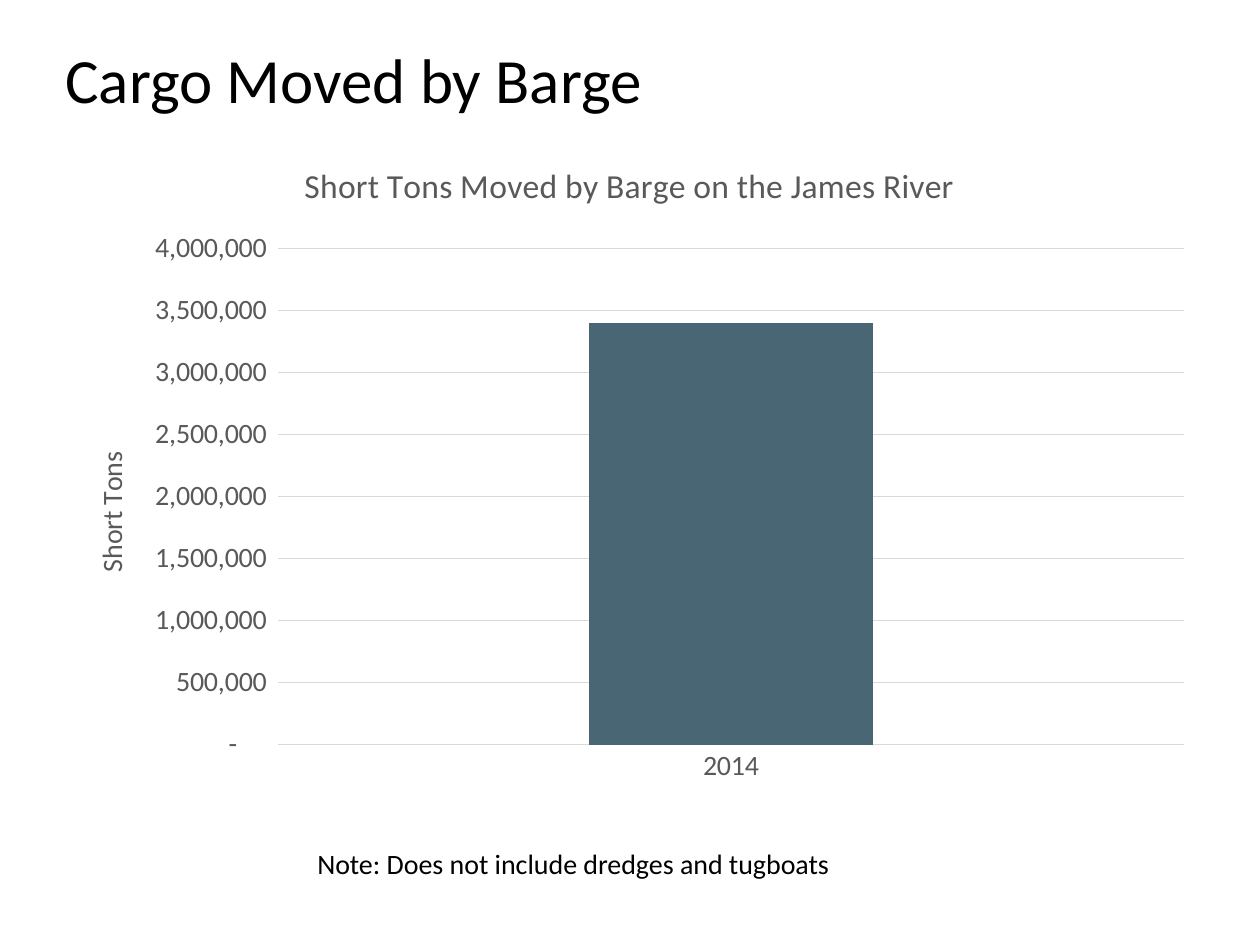
import pptx
import pptx.util
import pptx.chart.data
import pptx.dml.color
import pptx.enum.chart
import pptx.enum.text
import pptx.oxml
import pptx.oxml.ns

Pt, Inch = pptx.util.Pt, pptx.util.Inches
qn = pptx.oxml.ns.qn

# Content
HEAD = "Cargo Moved by Barge"
NOTE = "Note: Does not include dredges and tugboats"
CHART = {
    "title": "Short Tons Moved by Barge on the James River",
    "axis": "Short Tons",
    "cats": ["2014"],
    "name": "Series 1",
    "vals": [3400000],
    "format": '_(* #,##0_);_(* \\(#,##0\\);_(* "-"??_);_(',
}

# Theme
THEME = {
    "font": "Calibri", "ink": "000000", "gray": "595959",
    "grid": "D9D9D9", "bar": "486674",
    "head": 36, "body": 16, "title": 19.2, "line": 0.75,
}

# Slide grid, in inches
WIDE, HIGH = 10, 7.5
EDGE = 0.42
SPAN = WIDE - 2 * EDGE
PLACES = {
    "head": (EDGE, 0.25, SPAN, 0.58),
    "chart": (EDGE, 1.08, SPAN, 5.25),
    "note": (EDGE + 2, 6.67, 7, 0.33),
}


def color(name):
    return pptx.dml.color.RGBColor.from_string(THEME[name])


def style(font, size, ink):
    font.name, font.size, font.bold = THEME["font"], Pt(THEME[size]), False
    font.color.rgb = color(ink)


def place(part):
    return [Inch(n) for n in PLACES[part]]


def write(slide, part, text, size, top):
    frame = slide.shapes.add_textbox(*place(part)).text_frame
    frame.word_wrap = True
    frame.vertical_anchor = pptx.enum.text.MSO_ANCHOR.TOP
    frame.margin_top = Inch(top)
    para = frame.paragraphs[0]
    para.text = text
    style(para.font, size, "ink")


def label(owner, text, size):
    frame = owner.text_frame
    frame.text = text
    style(frame.paragraphs[0].font, size, "gray")


def rule(line):
    line.color.rgb = color("grid")
    line.width = Pt(THEME["line"])


def lay(node, index, **shares):
    """Set a manual layout, in shares of the chart's size."""
    for old in node.findall(qn("c:layout")):
        node.remove(old)
    modes = '<c:xMode val="edge"/><c:yMode val="edge"/>'
    if "w" in shares:
        modes = '<c:layoutTarget val="inner"/>' + modes
    parts = "".join(f'<c:{k} val="{v}"/>' for k, v in shares.items())
    node.insert(index, pptx.oxml.parse_xml(
        f'<c:layout {pptx.oxml.ns.nsdecls("c")}><c:manualLayout>'
        f'{modes}{parts}</c:manualLayout></c:layout>'))


def plot(slide):
    enum = pptx.enum.chart
    data = pptx.chart.data.CategoryChartData()
    data.categories = CHART["cats"]
    data.add_series(CHART["name"], CHART["vals"])
    chart = slide.shapes.add_chart(
        enum.XL_CHART_TYPE.COLUMN_CLUSTERED, *place("chart"), data).chart
    style(chart.font, "body", "ink")
    chart.has_legend = False
    label(chart.chart_title, CHART["title"], "title")

    # Columns
    bars = chart.plots[0]
    bars.gap_width, bars.overlap = 219, -27
    bars.vary_by_categories = False
    fill = bars.series[0].format.fill
    fill.solid()
    fill.fore_color.rgb = color("bar")

    # Axes
    cat, val = chart.category_axis, chart.value_axis
    for axis in (cat, val):
        axis.major_tick_mark = axis.minor_tick_mark = enum.XL_TICK_MARK.NONE
        style(axis.tick_labels.font, "body", "gray")
    rule(cat.format.line)
    val.format.line.fill.background()
    val.has_major_gridlines = True
    rule(val.major_gridlines.format.line)
    val.minimum_scale, val.maximum_scale = 0, 4000000
    val.major_unit = 500000
    val.tick_labels.number_format = CHART["format"]
    val.tick_labels.number_format_is_linked = False
    label(val.axis_title, CHART["axis"], "body")

    # Inner layout
    area = chart.element.find(qn("c:chart")).find(qn("c:plotArea"))
    lay(area, 0, x=0.195, y=0.17, w=0.785, h=0.75)
    title = area.find(qn("c:valAx")).find(qn("c:title"))
    lay(title, 1, x=0.03, y=0.47)


def main():
    deck = pptx.Presentation()
    deck.slide_width, deck.slide_height = Inch(WIDE), Inch(HIGH)
    slide = deck.slides.add_slide(deck.slide_layouts[6])
    write(slide, "head", HEAD, "head", 0.07)
    write(slide, "note", NOTE, "body", 0.05)
    plot(slide)
    deck.save("out.pptx")


if __name__ == "__main__":
    main()
